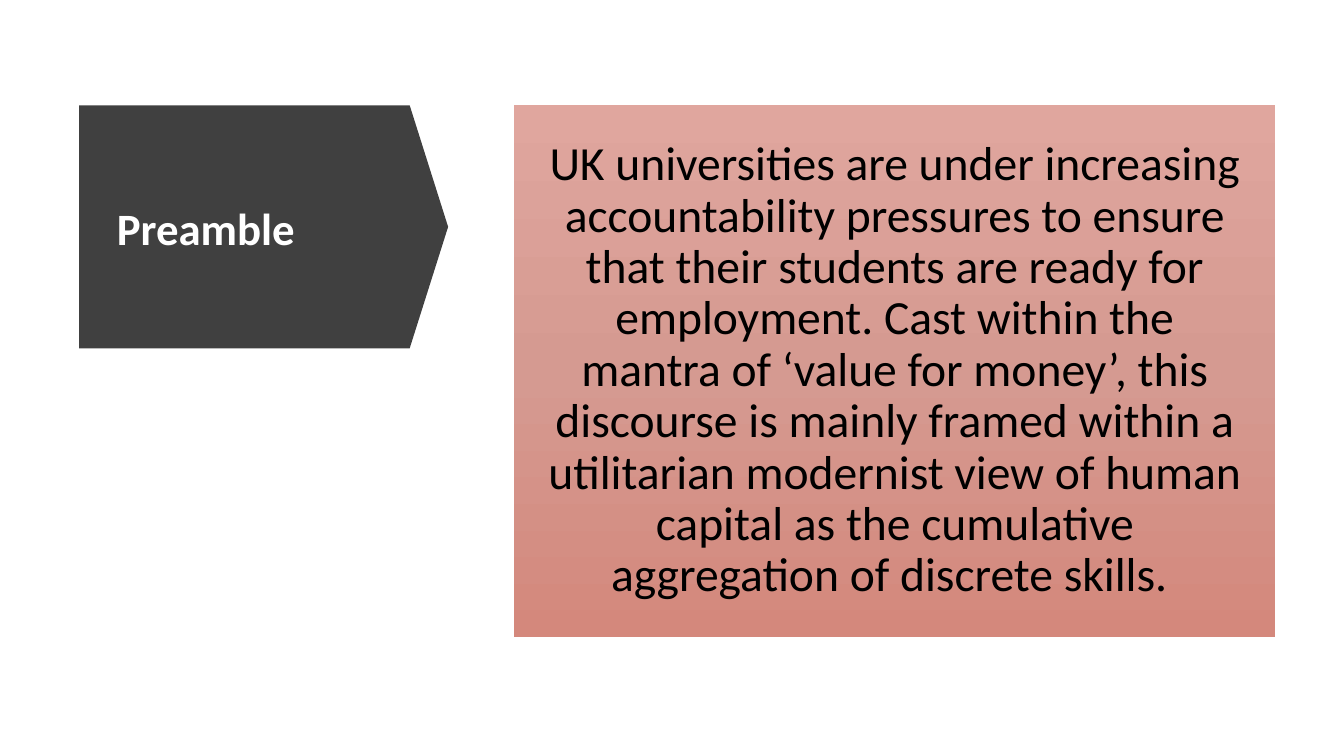
from copy import deepcopy
from dataclasses import dataclass

from pptx import Presentation
from pptx import util as u
from pptx.dml.color import RGBColor
from pptx.enum import shapes, text
from pptx.oxml import ns


@dataclass(frozen=True)
class Theme:
    font: str = "Calibri"
    arrow: str = "404040"
    title: str = "FFFFFF"
    body: str = "000000"
    panel: tuple = ((0, "E0A69E"), (0.5, "D59A91"), (1, "D4887C"))
    title_size: int = 32
    body_size: int = 34


theme = Theme()


def write(shape, words, color, frame_format, paragraph_format, font_format):
    frame = shape.text_frame
    paragraph = frame.paragraphs[0]
    run = paragraph.add_run()
    run.text = words
    run.font.color.rgb = RGBColor.from_string(color)
    shared_frame = {"word_wrap": True, "vertical_anchor": text.MSO_ANCHOR.MIDDLE}
    for target, values in (
        (frame, shared_frame | frame_format),
        (paragraph, {"line_spacing": 0.9} | paragraph_format),
        (run.font, {"name": theme.font} | font_format),
    ):
        for name, value in values.items():
            setattr(target, name, value)


deck = Presentation()
deck.slide_width, deck.slide_height = u.Inches(13.33), u.Inches(7.5)
slide = deck.slides.add_slide(deck.slide_layouts[6])

# Heading arrow, turned to point right at the statement
arrow = slide.shapes.add_shape(
    shapes.MSO_SHAPE.DOWN_ARROW,
    u.Inches(1.41), u.Inches(0.42), u.Inches(2.41), u.Inches(3.66))
arrow.rotation = 270
arrow.adjustments[0], arrow.adjustments[1] = 1, 0.158
arrow.shadow.inherit = False
arrow.fill.solid()
arrow.fill.fore_color.rgb = RGBColor.from_string(theme.arrow)
arrow.line.fill.background()

# Heading
heading = slide.shapes.add_textbox(
    u.Inches(1.06), u.Inches(1.32), u.Inches(2.92), u.Inches(1.95))
write(heading, "Preamble", theme.title, {},
      {"alignment": text.PP_ALIGN.LEFT},
      {"size": u.Pt(theme.title_size), "bold": True})

# Statement panel with a three-stop vertical gradient
statement = slide.shapes.add_shape(
    shapes.MSO_SHAPE.RECTANGLE,
    u.Inches(5.1), u.Inches(1.04), u.Inches(7.55), u.Inches(5.28))
statement.shadow.inherit = False
statement.line.fill.background()
statement.fill.gradient()
statement.fill.gradient_angle = 270
stop_list = statement.element.spPr.find(ns.qn("a:gradFill")).find(ns.qn("a:gsLst"))
stop_list.insert(1, deepcopy(stop_list[0]))
for stop, (position, color) in zip(statement.fill.gradient_stops, theme.panel):
    stop.position = position
    stop.color.rgb = RGBColor.from_string(color)

# Statement wording
margins = ("margin_left", "margin_top", "margin_right", "margin_bottom")
write(statement,
      "UK universities are under increasing accountability pressures to ensure "
      "that their students are ready for employment. Cast within the mantra of "
      "‘value for money’, this discourse is mainly framed within a utilitarian "
      "modernist view of human capital as the cumulative aggregation of discrete "
      "skills. ",
      theme.body, dict.fromkeys(margins, u.Inches(0.26)),
      {"alignment": text.PP_ALIGN.CENTER},
      {"size": u.Pt(theme.body_size)})

deck.save("out.pptx")
